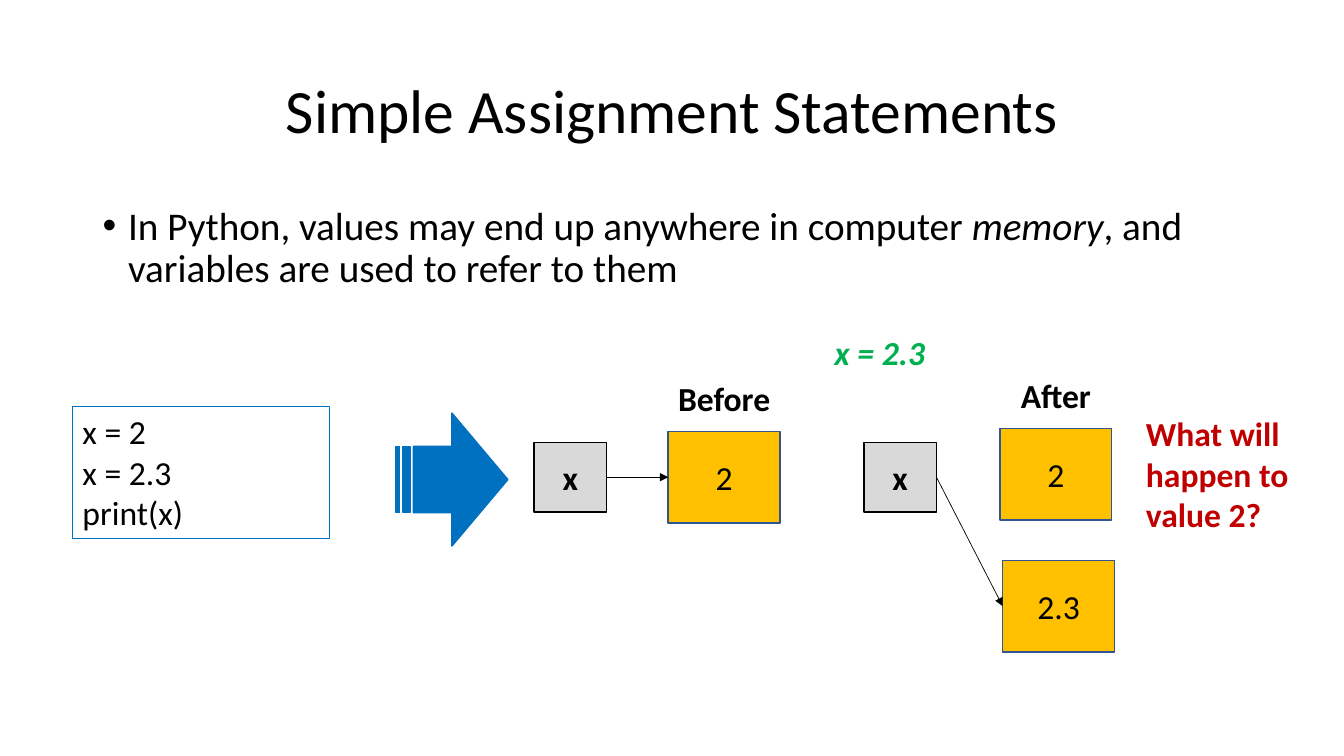
from lxml.etree import SubElement
from pptx import Presentation
from pptx.dml.color import RGBColor
from pptx.enum.shapes import MSO_CONNECTOR, MSO_SHAPE
from pptx.enum.text import MSO_ANCHOR, PP_ALIGN
from pptx.oxml.ns import qn
from pptx.util import Cm, Pt

FONT = "Calibri"
BLACK = RGBColor(0x00, 0x00, 0x00)
BLUE = RGBColor(0x00, 0x70, 0xC0)
NAVY = RGBColor(0x32, 0x54, 0x91)
AMBER = RGBColor(0xFF, 0xC0, 0x00)
GREY = RGBColor(0xD9, 0xD9, 0xD9)
GREEN = RGBColor(0x00, 0xB0, 0x50)
RED = RGBColor(0xC0, 0x00, 0x00)

VALUE_W, VALUE_H = 2.82, 2.31
NAME_W, NAME_H = 1.83, 1.75
LABEL_W, LABEL_H = 3.1, 1.27


def write(shape, lines, size=24, color=BLACK, bold=False, italic=False,
          align=PP_ALIGN.LEFT, anchor=MSO_ANCHOR.TOP, wrap=True):
    tf = shape.text_frame
    tf.text = lines
    tf.word_wrap = wrap
    tf.vertical_anchor = anchor
    for p in tf.paragraphs:
        p.alignment = align
        for r in p.runs:
            r.font.name = FONT
            r.font.size = Pt(size)
            r.font.color.rgb = color
            r.font.bold = bold
            r.font.italic = italic
    return tf


def add_text(s, left, top, width, height, lines, **style):
    tb = s.shapes.add_textbox(Cm(left), Cm(top), Cm(width), Cm(height))
    return write(tb, lines, **style)


def add_box(s, left, top, width, height, line, fill=None, weight=1,
            kind=MSO_SHAPE.RECTANGLE):
    sp = s.shapes.add_shape(kind, Cm(left), Cm(top), Cm(width), Cm(height))
    sp.shadow.inherit = False
    if fill is None:
        sp.fill.background()
    else:
        sp.fill.solid()
        sp.fill.fore_color.rgb = fill
    sp.line.color.rgb = line
    sp.line.width = Pt(weight)
    return sp


def add_arrow(s, x1, y1, x2, y2):
    line = s.shapes.add_connector(MSO_CONNECTOR.STRAIGHT,
                                  Cm(x1), Cm(y1), Cm(x2), Cm(y2))
    line.line.color.rgb = BLACK
    line.line.width = Pt(0.5)
    SubElement(line.line._get_or_add_ln(), qn("a:tailEnd"), type="triangle")
    SubElement(line._element.spPr, qn("a:effectLst"))


def draw_title(s, left, top, width, height):
    tf = add_text(s, left, top, width, height, "Simple Assignment Statements",
                  size=44, align=PP_ALIGN.CENTER, anchor=MSO_ANCHOR.MIDDLE)
    tf.paragraphs[0].line_spacing = 0.9


def draw_bullet(s, left, top, width, height):
    tf = add_text(s, left, top, width, height, "")
    p = tf.paragraphs[0]
    p.line_spacing = 0.9
    p.space_before = Pt(10)
    pPr = p._p.get_or_add_pPr()
    pPr.set("marL", str(Cm(0.64)))
    pPr.set("indent", str(-Cm(0.64)))
    SubElement(pPr, qn("a:buFont"), typeface="Arial")
    SubElement(pPr, qn("a:buChar"), char="•")
    for text, italic in (
            ("In Python, values may end up anywhere in computer ", False),
            ("memory", True),
            (", and variables are used to refer to them", False)):
        r = p.add_run()
        r.text = text
        r.font.name = FONT
        r.font.size = Pt(28)
        r.font.color.rgb = BLACK
        r.font.italic = italic


def draw_code(s, left, top, width, height):
    sp = add_box(s, left, top, width, height, BLUE, weight=0.75)
    write(sp, "x = 2\nx = 2.3\nprint(x)")
    # Striped arrow leading from the code to the memory states
    add_box(s, left + width + 1.67, top + 0.17, 2.82, 3.35, BLUE, BLUE,
            kind=MSO_SHAPE.STRIPED_RIGHT_ARROW)


def draw_state(s, left, top, label, values):
    """Variable x at (left, top); values are (text, dx, dy), x refers to the last."""
    centred = dict(align=PP_ALIGN.CENTER, anchor=MSO_ANCHOR.MIDDLE)
    name = add_box(s, left, top, NAME_W, NAME_H, BLACK, GREY)
    write(name, "x", bold=True, **centred)
    for text, dx, dy in values:
        value = add_box(s, left + dx, top + dy, VALUE_W, VALUE_H, NAVY, AMBER)
        write(value, text, **centred)
    # Label centred above the first value, arrow to the last
    _, dx, dy = values[0]
    add_text(s, left + dx + (VALUE_W - LABEL_W) / 2, top + dy - 1.48,
             LABEL_W, LABEL_H, label,
             bold=True, align=PP_ALIGN.CENTER, wrap=False)
    _, dx, dy = values[-1]
    add_arrow(s, left + NAME_W, top + NAME_H / 2,
              left + dx, top + dy + VALUE_H / 2)


def main():
    prs = Presentation()
    prs.slide_width, prs.slide_height = Cm(33.87), Cm(19.05)
    s = prs.slides.add_slide(prs.slide_layouts[6])

    # Heading and explanation
    draw_title(s, 2.34, 1.02, 29.21, 3.68)
    draw_bullet(s, 2.34, 5.08, 30.02, 13.03)

    # Code and memory before and after the second assignment
    draw_code(s, 1.83, 10.24, 6.48, 3.33)
    draw_state(s, 13.46, 11.15, "Before", [("2", 3.38, -0.28)])
    draw_state(s, 21.77, 11.15, "After",
               [("2", 3.43, -0.35), ("2.3", 3.5, 2.97)])

    # Statement and question
    add_text(s, 20.78, 8.23, 2.79, 1.27, "x = 2.3", color=GREEN,
             bold=True, italic=True, wrap=False)
    add_text(s, 28.63, 10.29, 4.34, 3.33,
             "What will \nhappen to \nvalue 2?", color=RED, bold=True, wrap=False)

    prs.save("out.pptx")


if __name__ == "__main__":
    main()
